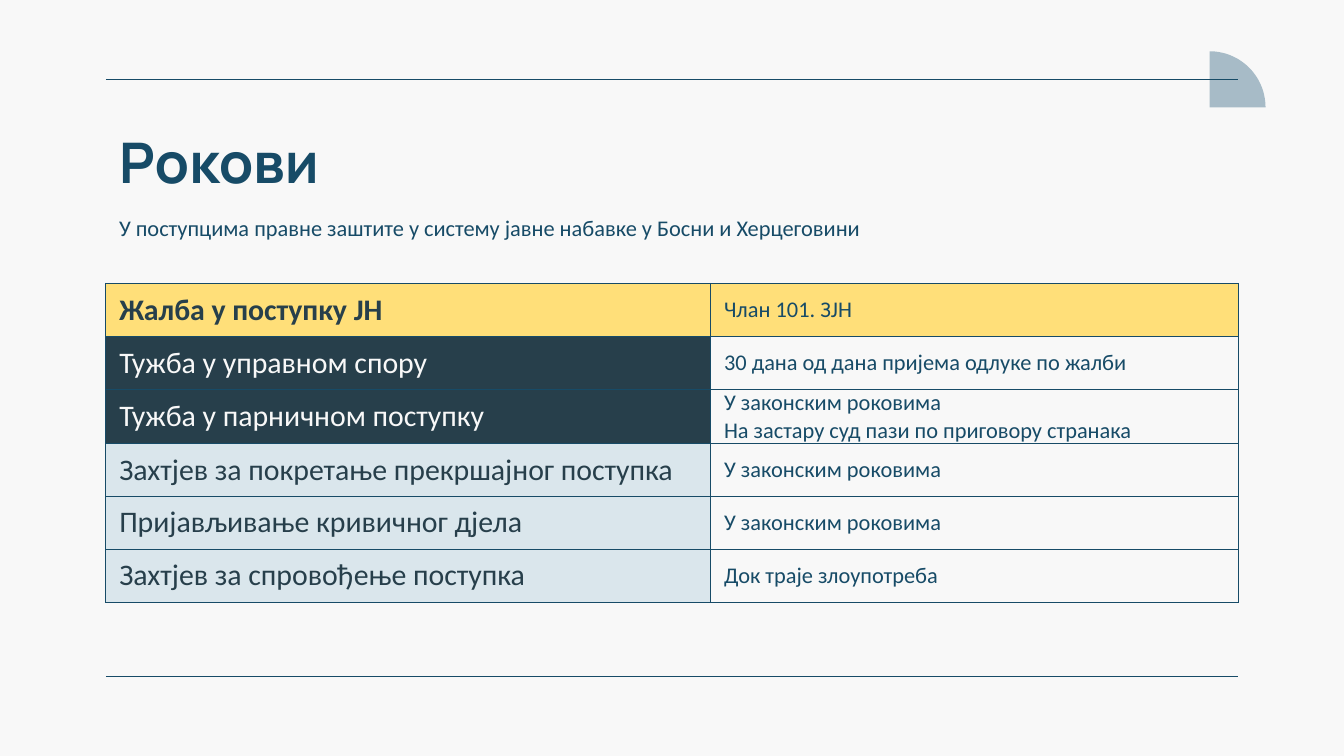
from math import cos, pi, sin

from lxml.etree import SubElement
from pptx import Presentation
from pptx.dml.color import RGBColor
from pptx.enum.shapes import MSO_CONNECTOR
from pptx.enum.text import MSO_ANCHOR
from pptx.oxml.ns import qn
from pptx.util import Pt

NAVY, SLATE, YELLOW = "174B67", "273F4B", "FFDF79"
PALE_BLUE, GREY_BLUE, OFF_WHITE = "DAE6EC", "A7BBC7", "F8F8F8"
LEFT, WIDTH = 56.7, 606.6
RULE_WEIGHT = 0.75
ROW_HEIGHT = 28.4
COLUMN_WIDTHS = (324, 282.6)

DEADLINES = [
    ("Жалба у поступку ЈН", ["Члан 101. ЗЈН"], YELLOW, SLATE),
    ("Тужба у управном спору", ["30 дана од дана пријема одлуке по жалби"], SLATE, OFF_WHITE),
    ("Тужба у парничном поступку",
     ["У законским роковима", "На застару суд пази по приговору странака"], SLATE, OFF_WHITE),
    ("Захтјев за покретање прекршајног поступка", ["У законским роковима"], PALE_BLUE, SLATE),
    ("Пријављивање кривичног дјела", ["У законским роковима"], PALE_BLUE, SLATE),
    ("Захтјев за спровођење поступка", ["Док траје злоупотреба"], PALE_BLUE, SLATE),
]


def color(hex_code):
    return RGBColor.from_string(hex_code)


def write(frame, lines, size, hex_code, font="Calibri", bold=False):
    for index, line in enumerate(lines):
        paragraph = frame.add_paragraph() if index else frame.paragraphs[0]
        run = paragraph.add_run()
        run.text = line
        run.font.size = Pt(size)
        run.font.name = font
        run.font.bold = bold
        run.font.color.rgb = color(hex_code)


def add_text(slide, top, height, line, size, font="Calibri", bold=False):
    frame = slide.shapes.add_textbox(Pt(LEFT), Pt(top), Pt(WIDTH), Pt(height)).text_frame
    frame.word_wrap = True
    frame.margin_left = frame.margin_right = Pt(7.2)
    frame.margin_top = frame.margin_bottom = Pt(7.2)
    write(frame, [line], size, NAVY, font, bold)


def add_rule(slide, y):
    rule = slide.shapes.add_connector(
        MSO_CONNECTOR.STRAIGHT, Pt(LEFT), Pt(y), Pt(LEFT + WIDTH), Pt(y))
    rule.line.color.rgb = color(NAVY)
    rule.line.width = Pt(RULE_WEIGHT)
    SubElement(rule._element.spPr, qn("a:effectLst"))


def add_quarter_disc(slide, center_x, center_y, radius, steps=45):
    angles = [pi / 2 * step / steps for step in range(steps + 1)]
    arc = [(Pt(center_x + radius * sin(a)), Pt(center_y - radius * cos(a))) for a in angles]
    builder = slide.shapes.build_freeform(Pt(center_x), Pt(center_y))
    builder.add_line_segments(arc, close=True)
    disc = builder.convert_to_shape()
    disc.shadow.inherit = False
    disc.fill.solid()
    disc.fill.fore_color.rgb = color(GREY_BLUE)
    disc.line.fill.background()


def add_borders(cell):
    properties = cell._tc.get_or_add_tcPr()
    for side in ("a:lnL", "a:lnR", "a:lnT", "a:lnB"):
        border = SubElement(properties, qn(side), w=str(Pt(RULE_WEIGHT)))
        fill = SubElement(border, qn("a:solidFill"))
        SubElement(fill, qn("a:srgbClr"), val=NAVY)


def fill_cell(cell, lines, size, text_color, background=None, bold=False):
    cell.vertical_anchor = MSO_ANCHOR.MIDDLE
    cell.margin_left = cell.margin_right = Pt(7.2)
    cell.margin_top = cell.margin_bottom = Pt(0)
    add_borders(cell)
    if background:
        cell.fill.solid()
        cell.fill.fore_color.rgb = color(background)
    else:
        cell.fill.background()
    write(cell.text_frame, lines, size, text_color, bold=bold)


def add_deadline_table(slide, top):
    table = slide.shapes.add_table(
        len(DEADLINES), 2, Pt(LEFT), Pt(top),
        Pt(WIDTH), Pt(ROW_HEIGHT * len(DEADLINES))).table
    table.first_row = table.horz_banding = False
    for column, width in zip(table.columns, COLUMN_WIDTHS):
        column.width = Pt(width)
    for index, (remedy, deadline, background, text_color) in enumerate(DEADLINES):
        heading = index == 0
        table.rows[index].height = Pt(ROW_HEIGHT)
        fill_cell(table.cell(index, 0), [remedy], 16, text_color, background, heading)
        fill_cell(table.cell(index, 1), deadline, 12, NAVY, background if heading else None)


def main():
    deck = Presentation()
    deck.slide_width, deck.slide_height = Pt(720), Pt(405)
    slide = deck.slides.add_slide(deck.slide_layouts[6])
    slide.background.fill.solid()
    slide.background.fill.fore_color.rgb = color(OFF_WHITE)

    add_quarter_disc(slide, 648, 57.5, 30)
    add_rule(slide, 42.5)
    add_rule(slide, 362.5)
    add_text(slide, 61.2, 45.4, "Рокови", 30, "Manrope", True)
    add_deadline_table(slide, 151.9)
    add_text(slide, 107.3, 31,
             "У поступцима правне заштите у систему јавне набавке у Босни и Херцеговини", 12)
    deck.save("out.pptx")


if __name__ == "__main__":
    main()
